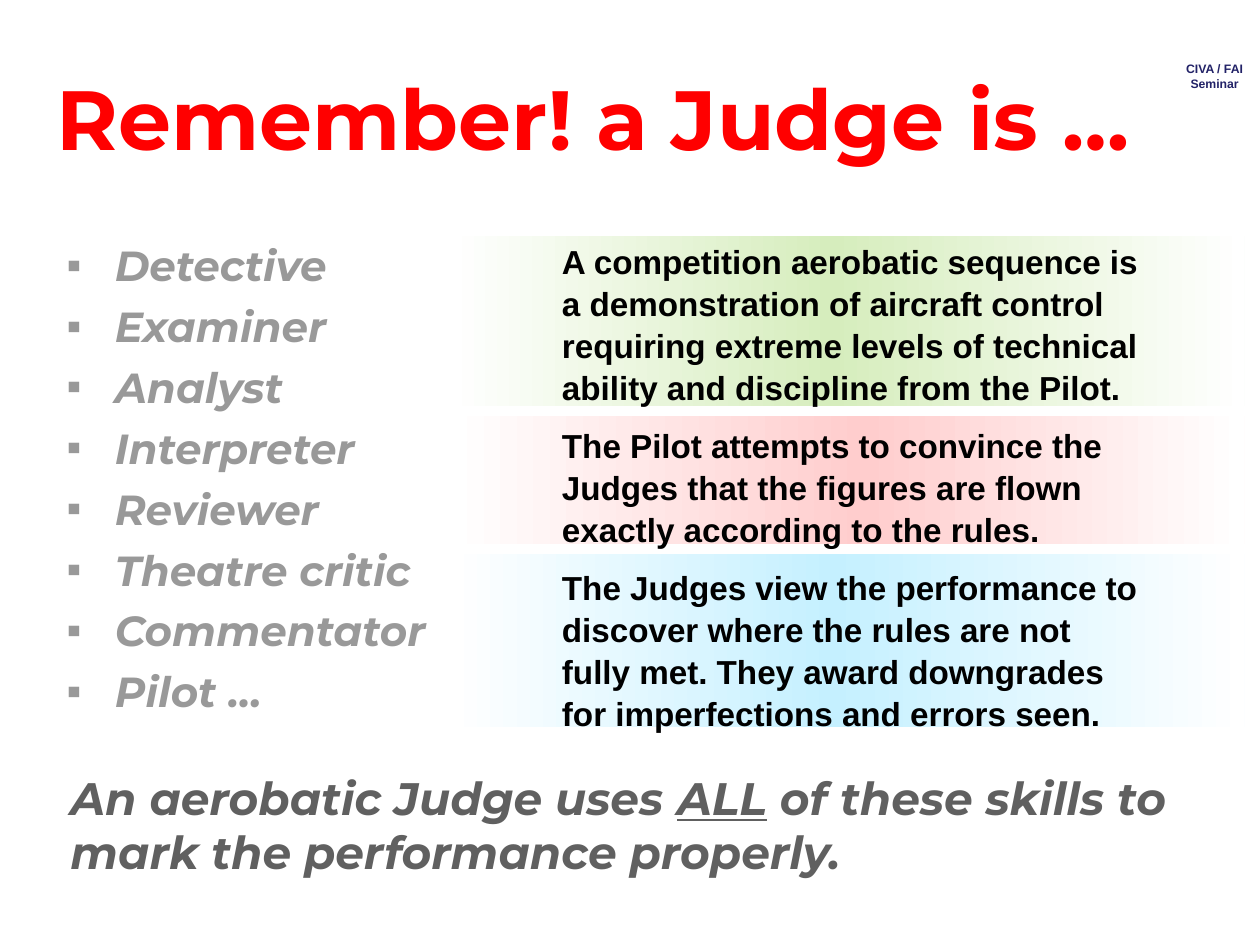
import copy

import pptx
import pptx.dml.color
import pptx.enum.shapes
import pptx.enum.text
import pptx.oxml
import pptx.oxml.ns
import pptx.util

Cm, Pt = pptx.util.Cm, pptx.util.Pt
ALIGN = pptx.enum.text.PP_ALIGN
ANCHOR = pptx.enum.text.MSO_ANCHOR
qn = pptx.oxml.ns.qn

# Content
TITLE = "Remember! a Judge is …"
TAG = ["CIVA / FAI", "Seminar"]
ROLES = ["Detective", "Examiner", "Analyst", "Interpreter", "Reviewer",
         "Theatre critic", "Commentator", "Pilot …"]
STATEMENTS = [
    "A competition aerobatic sequence is a demonstration of aircraft control "
    "requiring extreme levels of technical ability and discipline from the Pilot.",
    "The Pilot attempts to convince the Judges that the figures are flown "
    "exactly according to the rules.",
    "The Judges view the performance to discover where the rules are not fully "
    "met. They award downgrades for imperfections and errors seen.",
]
CONCLUSION = [("An aerobatic Judge uses ", False), ("ALL", True),
              (" of these skills to mark the performance properly.", False)]
# Panels behind the statements: colour, height in cm, position of the strongest tint
PANELS = [("green", 3.43, 0.48), ("pink", 2.59, 0.52), ("blue", 3.48, 0.48)]

COLORS = {"white": "FFFFFF", "red": "FF0000", "navy": "222267", "black": "000000",
          "grey": "999999", "dark": "606060", "green": "D6EDBD",
          "pink": "FFCDCD", "blue": "C5F0FF"}
FORMATS = {
    "title": dict(name="Montserrat", size=Pt(48), bold=True, color="red"),
    "tag": dict(name="Arial", size=Pt(7), bold=True, color="navy"),
    "role": dict(name="Montserrat", size=Pt(24), bold=True, italic=True, color="grey"),
    "statement": dict(name="Arial", size=Pt(19), bold=True, color="black"),
    "conclusion": dict(name="Montserrat", size=Pt(26), bold=True, italic=True, color="dark"),
}
HANG = Cm(0.97)


def rgb(name):
    return pptx.dml.color.RGBColor.from_string(COLORS[name])


def add_run(p, text, style, underline=False, shadow=0):
    """Add a formatted run; shadow is its distance in points."""
    r = p.add_run()
    r.text = text
    for key, value in FORMATS[style].items():
        if key == "color":
            r.font.color.rgb = rgb(value)
        else:
            setattr(r.font, key, value)
    if underline:
        r.font.underline = True
    if shadow:
        effect = pptx.oxml.parse_xml(
            f'<a:effectLst {pptx.oxml.ns.nsdecls("a")}>'
            f'<a:outerShdw blurRad="{Pt(shadow)}" dist="{Pt(shadow)}" dir="2700000" algn="tl">'
            '<a:srgbClr val="000000"><a:alpha val="43000"/></a:srgbClr>'
            '</a:outerShdw></a:effectLst>')
        r.font._element.find(qn("a:solidFill")).addnext(effect)


def set_frame(sp, box, anchor=ANCHOR.TOP, wrap=True):
    sp.left, sp.top, sp.width, sp.height = (Cm(v) for v in box)
    tf = sp.text_frame
    tf.auto_size = pptx.enum.text.MSO_AUTO_SIZE.NONE
    tf.word_wrap = wrap
    tf.vertical_anchor = anchor
    return tf


def paragraphs(tf, texts, space=0):
    """Yield one paragraph per text, with space between them only."""
    for i, text in enumerate(texts):
        p = tf.add_paragraph() if i else tf.paragraphs[0]
        p.space_before = Pt(space if i else 0)
        yield p, text


def text_box(s, *frame, **options):
    return set_frame(s.shapes.add_textbox(0, 0, 0, 0), *frame, **options)


def add_panel(s, top, height, color, peak):
    sp = s.shapes.add_shape(pptx.enum.shapes.MSO_SHAPE.RECTANGLE,
                            Cm(9.09), Cm(top), Cm(16), Cm(height))
    sp.shadow.inherit = False
    sp.line.fill.background()
    sp.fill.gradient()
    sp.fill.gradient_angle = 0
    stops = sp._element.spPr.find(qn("a:gradFill")).find(qn("a:gsLst"))
    stops.insert(1, copy.deepcopy(stops[0]))
    marks = [(0, "white"), (peak, color), (1, "white")]
    for stop, (position, name) in zip(sp.fill.gradient_stops, marks):
        stop.position = position
        stop.color.rgb = rgb(name)


def main():
    prs = pptx.Presentation()
    prs.slide_width, prs.slide_height = Cm(25.4), Cm(19.05)
    s = prs.slides.add_slide(prs.slide_layouts[1])
    title, body = s.placeholders

    # Title
    tf = set_frame(title, (0.89, 0.76, 23.6, 3.18), ANCHOR.MIDDLE)
    tf.paragraphs[0].alignment = ALIGN.LEFT
    add_run(tf.paragraphs[0], TITLE, "title", shadow=3)

    # Seminar tag
    tf = text_box(s, (23.62, 1.12, 1.73, 0.86), wrap=False)
    for p, text in paragraphs(tf, TAG):
        p.alignment = ALIGN.CENTER
        add_run(p, text, "tag", shadow=1)

    # Roles
    tf = set_frame(body, (1.09, 4.7, 8.41, 10.03))
    for p, text in paragraphs(tf, ROLES, 6):
        pPr = p._p.get_or_add_pPr()
        pPr.set("marL", str(HANG))
        pPr.set("indent", str(-HANG))
        pptx.oxml.ns  # bullet elements follow the spacing
        for tag, attr, value in (("buFont", "typeface", "Arial"), ("buChar", "char", "▪")):
            bullet = pptx.oxml.parse_xml(f'<a:{tag} {pptx.oxml.ns.nsdecls("a")}/>')
            bullet.set(attr, value)
            pPr.append(bullet)
        add_run(p, text, "role")

    # Tinted panels, stacked with equal gaps
    top = 4.75
    for color, height, peak in PANELS:
        add_panel(s, top, height, color, peak)
        top += height + 0.2

    # Statements
    tf = text_box(s, (10.11, 4.7, 13.21, 10.39))
    for p, text in paragraphs(tf, STATEMENTS, 9.5):
        p.line_spacing = 1.05
        p._p.get_or_add_pPr().set("marL", str(HANG))
        add_run(p, text, "statement")

    # Conclusion
    tf = text_box(s, (1.17, 15.72, 23.6, 1.8), anchor=ANCHOR.MIDDLE)
    for text, underline in CONCLUSION:
        add_run(tf.paragraphs[0], text, "conclusion", underline, shadow=3)

    prs.save("out.pptx")


if __name__ == "__main__":
    main()
